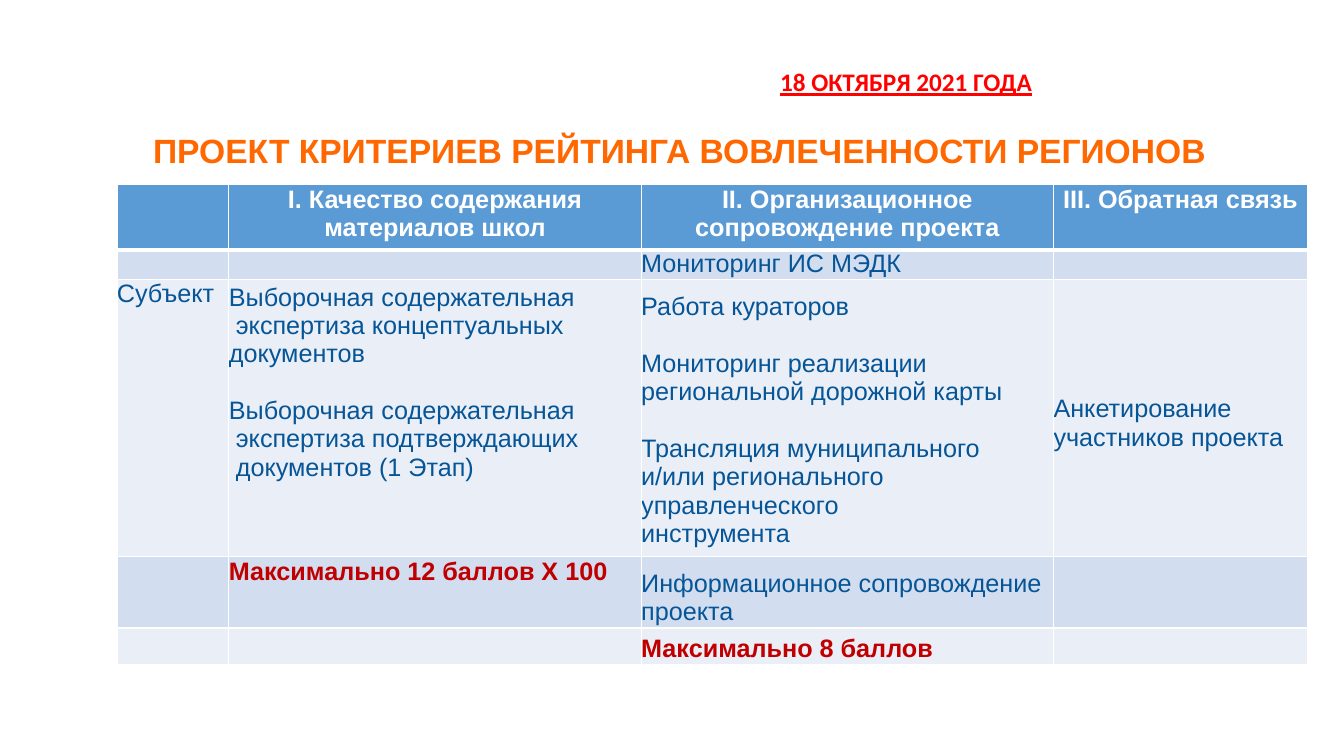
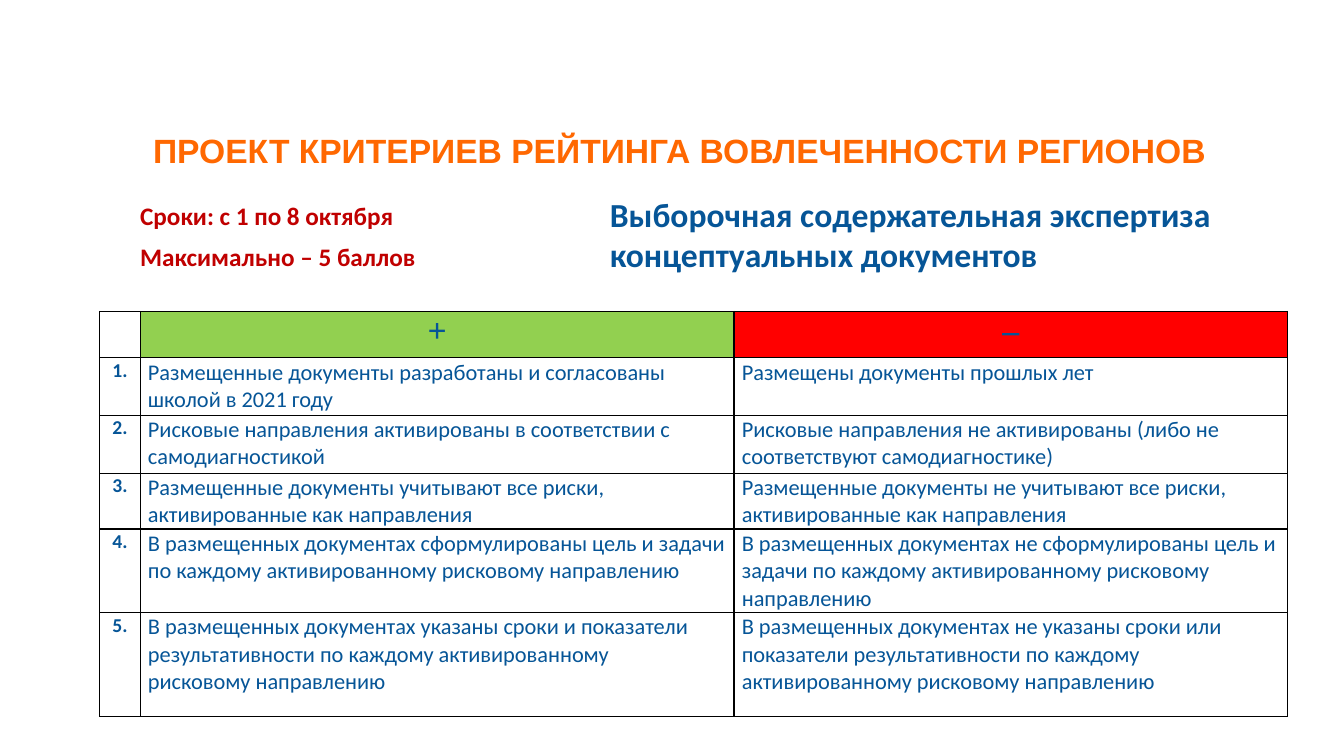
"""Build two slides with the rating criteria for regional involvement."""
from dataclasses import dataclass

from lxml import etree
from pptx import Presentation
from pptx import util as u
from pptx.dml.color import RGBColor
from pptx.enum import text as t
from pptx.oxml import ns


@dataclass(frozen=True)
class Style:
    font: str
    size: int
    color: str
    bold: bool = False
    underline: bool = False
    center: bool = False


@dataclass(frozen=True)
class Theme:
    title = Style("Arial", 24, "FF6801", bold=True, center=True)
    date = Style("Calibri", 18, "FF0000", bold=True, underline=True)
    terms = Style("Calibri", 18, "C00000", bold=True)
    topic = Style("Calibri", 24, "065597", bold=True)
    head = Style("Arial", 18, "FFFFFF", bold=True, center=True)
    body = Style("Arial", 18, "065597")
    score = Style("Arial", 18, "C00000", bold=True)
    sign = Style("Times New Roman", 24, "065597", bold=True, center=True)
    number = Style("Calibri", 14, "065597", bold=True, center=True)
    criterion = Style("Calibri", 16, "065597")
    empty_size = 10
    blue, band_dark, band_light = "5B9BD5", "D2DEEF", "EAEFF7"
    green, red, white, black = "92D050", "FF0000", "FFFFFF", "000000"


@dataclass(frozen=True)
class Cell:
    text: str = ""
    style: Style = Theme.body
    top: float = 0
    left: float = 0
    fill: str = ""


deck = Presentation()
deck.slide_width, deck.slide_height = u.Inches(13.33), u.Inches(7.5)
COLUMN, ROW = deck.slide_width / 100, deck.slide_height / 100


def frame(left, top, width, height):
    return [int(n * unit) for n, unit in zip((left, top, width, height), (COLUMN, ROW) * 2)]


def write(text_frame, text, style):
    text_frame.word_wrap = True
    for index, block in enumerate(text.split("\n\n")):
        para = text_frame.add_paragraph() if index else text_frame.paragraphs[0]
        para.alignment = t.PP_ALIGN.CENTER if style.center else t.PP_ALIGN.LEFT
        para.space_before = u.Pt(style.size * 1.15 if index else 0)
        for number, line in enumerate(block.split("\n")):
            if number:
                para.add_line_break()
            span = para.add_run()
            span.text = line
            span.font.name, span.font.size = style.font, u.Pt(style.size)
            span.font.bold, span.font.underline = style.bold, style.underline
            span.font.color.rgb = RGBColor.from_string(style.color)


DARK, LIGHT = Cell(fill=Theme.band_dark), Cell(fill=Theme.band_light)
overview = [
    [Cell(text, Theme.head, 0.13, fill=Theme.blue) for text in (
        "", "I. Качество содержания\nматериалов школ",
        "II. Организационное\nсопровождение проекта", "III. Обратная связь")],
    [DARK, DARK, Cell("Мониторинг ИС МЭДК", fill=Theme.band_dark), DARK],
    [Cell("Субъект", fill=Theme.band_light),
     Cell("Выборочная содержательная\n экспертиза концептуальных\nдокументов\n\n"
          "Выборочная содержательная\n экспертиза подтверждающих\n документов (1 Этап)",
          top=0.53, fill=Theme.band_light),
     Cell("Работа кураторов\n\nМониторинг реализации\nрегиональной дорожной карты\n\n"
          "Трансляция муниципального\nи/или регионального\nуправленческого\nинструмента",
          top=1.73, fill=Theme.band_light),
     Cell("Анкетирование\nучастников проекта", top=15.33, fill=Theme.band_light)],
    [DARK, Cell("Максимально 12 баллов X 100", Theme.score, 0.13, fill=Theme.band_dark),
     Cell("Информационное сопровождение\nпроекта", top=1.73, fill=Theme.band_dark), DARK],
    [LIGHT, LIGHT, Cell("Максимально 8 баллов", Theme.score, 0.93, fill=Theme.band_light), LIGHT],
]

criteria = [
    ("Размещенные документы разработаны и согласованы\nшколой в 2021 году",
     "Размещены документы прошлых лет"),
    ("Рисковые направления активированы в соответствии с\nсамодиагностикой",
     "Рисковые направления не активированы (либо не\nсоответствуют самодиагностике)"),
    ("Размещенные документы учитывают все риски,\nактивированные как направления",
     "Размещенные документы не учитывают все риски,\nактивированные как направления"),
    ("В размещенных документах сформулированы цель и задачи "
     "по каждому активированному рисковому направлению",
     "В размещенных документах не сформулированы цель и "
     "задачи по каждому активированному рисковому направлению"),
    ("В размещенных документах указаны сроки и показатели\n"
     "результативности по каждому активированному\nрисковому направлению",
     "В размещенных документах не указаны сроки или\n"
     "показатели результативности по каждому\nактивированному рисковому направлению"),
]
checklist = [[Cell(), Cell("+", Theme.sign, 0.13, fill=Theme.green),
              Cell("–", Theme.sign, 0.13, fill=Theme.red)]]
for number, pair in enumerate(criteria, 1):
    checklist.append([Cell(f"{number}.", Theme.number, 0.13)]
                     + [Cell(text, Theme.criterion, 0.13, 0.58) for text in pair])

pages = [
    dict(cells=overview, corner=(8.7, 24.4), line=Theme.white, head_line=3,
         columns=(8.33, 30.68, 30.68, 18.9), rows=(8.67, 3.87, 36.67, 9.47, 4.8),
         boxes=[("18 ОКТЯБРЯ 2021 ГОДА", Theme.date, (57.31, 8.13, 20.25, 5.33), True)]),
    dict(cells=checklist, corner=(7.43, 41.2), line=Theme.black, head_line=1,
         columns=(3, 44.19, 41.18), rows=(6.13, 7.6, 7.67, 7.33, 11.07, 13.73),
         boxes=[("Максимально – 5 баллов", Theme.terms, (10.43, 31.87, 20.7, 4.4), False),
                ("Сроки: с 1 по 8 октября", Theme.terms, (10.43, 26.53, 20.7, 4.4), False),
                ("Выборочная содержательная экспертиза концептуальных документов",
                 Theme.topic, (44.64, 24.93, 50.04, 12.13), True)]),
]

for content in pages:
    page = deck.slides.add_slide(deck.slide_layouts[5])
    title = page.shapes.title
    title.left, title.top, title.width, title.height = frame(3.83, 6.67, 93.47, 16.53)
    title.text_frame.vertical_anchor = t.MSO_ANCHOR.BOTTOM
    title.text_frame.auto_size = t.MSO_AUTO_SIZE.NONE
    write(title.text_frame, "ПРОЕКТ КРИТЕРИЕВ РЕЙТИНГА ВОВЛЕЧЕННОСТИ РЕГИОНОВ", Theme.title)
    title.text_frame.paragraphs[0].line_spacing = 0.9

    columns, rows = content["columns"], content["rows"]
    table = page.shapes.add_table(
        len(rows), len(columns), *frame(*content["corner"], sum(columns), sum(rows))).table
    table.first_row = table.horz_banding = False
    for index, share in enumerate(columns):
        table.columns[index].width = int(share * COLUMN)
    for index, share in enumerate(rows):
        table.rows[index].height = int(share * ROW)

    for row, line in enumerate(content["cells"]):
        for column, item in enumerate(line):
            cell = table.cell(row, column)
            cell.margin_left, cell.margin_top = int(item.left * COLUMN), int(item.top * ROW)
            cell.margin_right = cell.margin_bottom = 0
            properties = cell._tc.get_or_add_tcPr()
            for side in "LRTB":
                heavy = (row, side) in ((0, "B"), (1, "T"))
                points = content["head_line"] if heavy else 1
                border = etree.SubElement(properties, ns.qn(f"a:ln{side}"), w=str(u.Pt(points)))
                paint = etree.SubElement(border, ns.qn("a:solidFill"))
                etree.SubElement(paint, ns.qn("a:srgbClr"), val=content["line"])
            if item.fill:
                cell.fill.solid()
                cell.fill.fore_color.rgb = RGBColor.from_string(item.fill)
            else:
                cell.fill.background()
            if item.text:
                write(cell.text_frame, item.text, item.style)
            else:
                etree.SubElement(cell.text_frame.paragraphs[0]._p, ns.qn("a:endParaRPr"),
                                 sz=str(Theme.empty_size * 100))

    for text, style, place, padded in content["boxes"]:
        box = page.shapes.add_textbox(*frame(*place))
        write(box.text_frame, text, style)
        if not padded:
            box.text_frame.margin_left = box.text_frame.margin_right = 0
            box.text_frame.margin_top = box.text_frame.margin_bottom = 0

deck.save("out.pptx")
